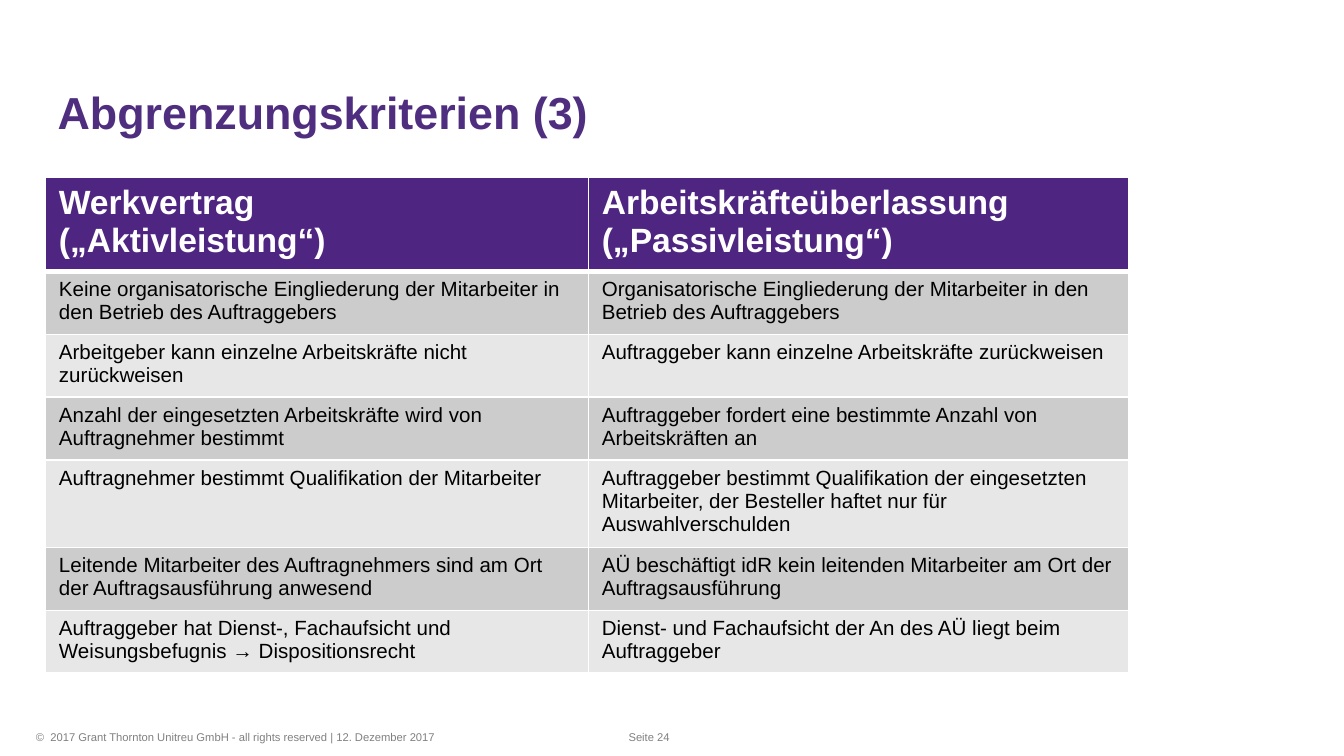
"""Build a slide with a table comparing two contract types."""
from lxml import etree
from pptx import Presentation
from pptx import util as u
from pptx.dml import color
from pptx.enum import text
from pptx.oxml import ns


def rgb(value):
    return color.RGBColor.from_string(value)


def write(frame, content, size=11, hex_color="000000", bold=False, anchor=text.MSO_ANCHOR.TOP):
    frame.word_wrap = True
    frame.vertical_anchor = anchor
    frame.text = content
    for paragraph in frame.paragraphs:
        for run in paragraph.runs:
            run.font.name = "Arial"
            run.font.size = u.Pt(size)
            run.font.bold = bold
            run.font.color.rgb = rgb(hex_color)


presentation = Presentation()
presentation.slide_width = u.Cm(25.4)
presentation.slide_height = u.Cm(14.28)
slide = presentation.slides.add_slide(presentation.slide_layouts[6])

footer = {"size": 6, "hex_color": "808080"}
title = {"size": 24, "hex_color": "4F2D7F", "bold": True, "anchor": text.MSO_ANCHOR.MIDDLE}
copyright_line = "©  2017 Grant Thornton Unitreu GmbH - all rights reserved | 12. Dezember 2017"
for content, left, top, width, height, style in [
    (copyright_line, 0.43, 13.67, 10, 0.5, footer),
    ("Seite 24", 11.63, 13.67, 2.13, 0.5, footer),
    ("Abgrenzungskriterien (3)", 0.84, 0.94, 20.83, 2.34, title),
]:
    box = slide.shapes.add_textbox(u.Cm(left), u.Cm(top), u.Cm(width), u.Cm(height))
    write(box.text_frame, content, **style)

rows = [
    ("Werkvertrag\n(„Aktivleistung“)",
     "Arbeitskräfteüberlassung („Passivleistung“)"),
    ("Keine organisatorische Eingliederung der Mitarbeiter in den Betrieb des Auftraggebers",
     "Organisatorische Eingliederung der Mitarbeiter in den Betrieb des Auftraggebers"),
    ("Arbeitgeber kann einzelne Arbeitskräfte nicht zurückweisen",
     "Auftraggeber kann einzelne Arbeitskräfte zurückweisen"),
    ("Anzahl der eingesetzten Arbeitskräfte wird von Auftragnehmer bestimmt",
     "Auftraggeber fordert eine bestimmte Anzahl von Arbeitskräften an"),
    ("Auftragnehmer bestimmt Qualifikation der Mitarbeiter",
     "Auftraggeber bestimmt Qualifikation der eingesetzten Mitarbeiter, "
     "der Besteller haftet nur für Auswahlverschulden"),
    ("Leitende Mitarbeiter des Auftragnehmers sind am Ort der Auftragsausführung anwesend",
     "AÜ beschäftigt idR kein leitenden Mitarbeiter am Ort der Auftragsausführung"),
    ("Auftraggeber hat Dienst-, Fachaufsicht und Weisungsbefugnis → Dispositionsrecht",
     "Dienst- und Fachaufsicht der An des AÜ liegt beim Auftraggeber"),
]
heights = [1.65, 1.12, 1.12, 1.12, 1.55, 1.12, 1.12]
table = slide.shapes.add_table(
    len(rows), 2, u.Cm(0.86), u.Cm(3.35), u.Cm(20.47), u.Cm(sum(heights))).table
table.columns[0].width = u.Cm(10.26)
table.columns[1].width = u.Cm(10.21)

for row_index, row in enumerate(rows):
    table.rows[row_index].height = u.Cm(heights[row_index])
    is_header = row_index == 0
    fill = "4F2582" if is_header else ("E7E7E7", "CCCCCC")[row_index % 2]
    style = {"size": 18, "hex_color": "FFFFFF", "bold": True} if is_header else {}
    for column_index, content in enumerate(row):
        cell = table.cell(row_index, column_index)
        write(cell.text_frame, content, **style)
        properties = cell._tc.get_or_add_tcPr()
        for side in "LRTB":
            is_heavy = (row_index, side) in [(0, "B"), (1, "T")]
            border = etree.SubElement(
                properties, ns.qn(f"a:ln{side}"), w=str(u.Pt(3 if is_heavy else 1)))
            solid = etree.SubElement(border, ns.qn("a:solidFill"))
            etree.SubElement(solid, ns.qn("a:srgbClr"), val="FFFFFF")
        cell.fill.solid()
        cell.fill.fore_color.rgb = rgb(fill)

presentation.save("out.pptx")
